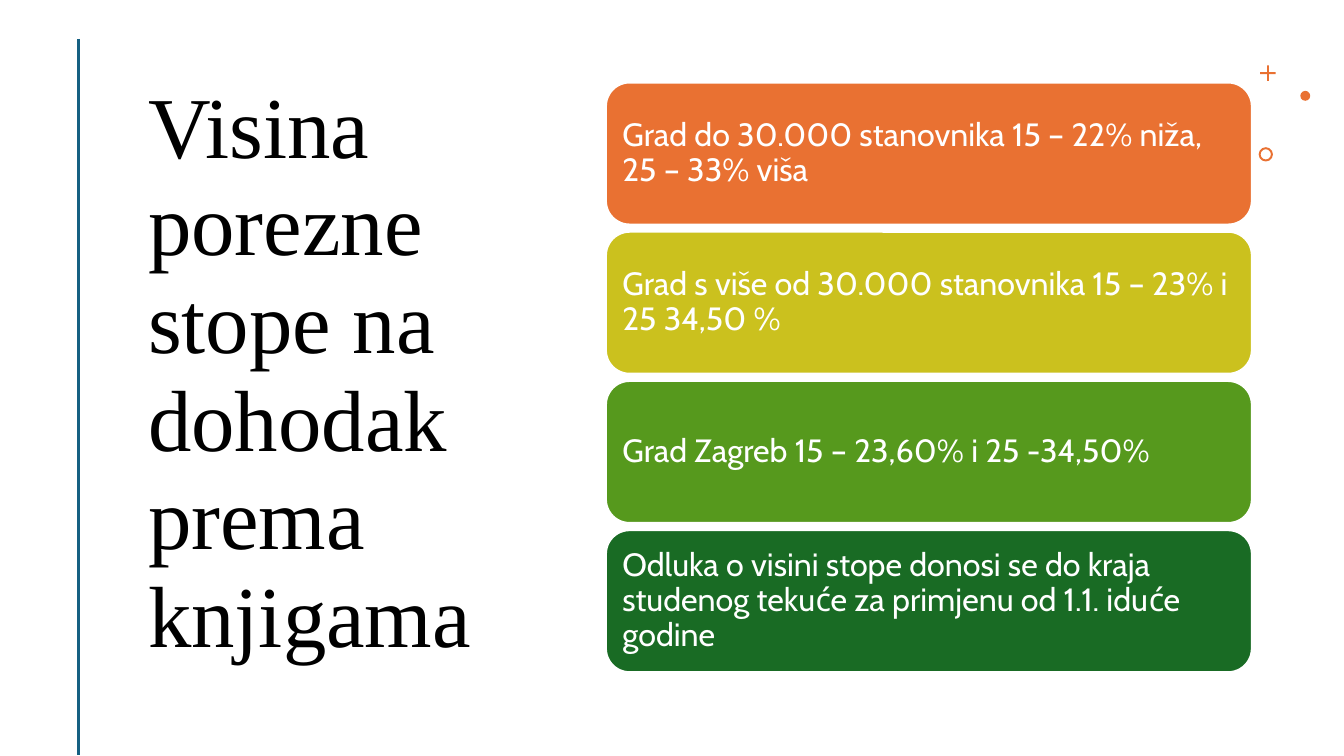
import pptx
import pptx.dml.color
import pptx.enum.shapes
import pptx.enum.text
import pptx.oxml
import pptx.util
from dataclasses import dataclass

Cm, Pt = pptx.util.Cm, pptx.util.Pt
RGB = pptx.dml.color.RGBColor.from_string
SHAPE = pptx.enum.shapes.MSO_SHAPE
TEXT = pptx.enum.text


@dataclass(frozen=True)
class Theme:
    title_font: str = "Times New Roman"
    card_font: str = "Cabin"
    title_size: int = 62
    card_size: int = 23
    ink: str = "000000"
    paper: str = "FFFFFF"
    rule: str = "156082"
    accent: str = "E97132"


theme = Theme()

# Content
TITLE = "Visina porezne stope na dohodak prema knjigama"
CARDS = [
    ("Grad do 30.000 stanovnika 15 – 22% niža, 25 – 33% viša", theme.accent),
    ("Grad s više od 30.000 stanovnika 15 – 23% i 25 34,50 %", "CBC11E"),
    ("Grad Zagreb 15 – 23,60% i 25 -34,50%", "56991D"),
    ("Odluka o visini stope donosi se do kraja studenog tekuće "
     "za primjenu od 1.1. iduće godine", "196B24"),
]
# Ornaments: shape, left, top, size in cm, adjustment
ORNAMENTS = [
    (SHAPE.CROSS, 31.76, 1.65, 0.39, 0.44),
    (SHAPE.OVAL, 32.77, 2.29, 0.25, None),
    (SHAPE.DONUT, 31.72, 3.71, 0.36, 0.14),
]

# Layout in cm
TITLE_BOX = (3.48, 1.65, 10.95, 15.52)
RULE_X, RULE_TOP, RULE_BOTTOM = 1.98, 0.98, 19.03
CARD_LEFT, CARD_TOP, CARD_W, CARD_H, CARD_GAP = 15.27, 2.08, 16.28, 3.58, 0.18


def add_filled(s, kind, left, top, width, height, color):
    sp = s.shapes.add_shape(kind, Cm(left), Cm(top), Cm(width), Cm(height))
    sp.shadow.inherit = False
    sp.fill.solid()
    sp.fill.fore_color.rgb = RGB(color)
    sp.line.fill.background()
    return sp


def write(tf, text, font, size, color, spacing):
    tf.word_wrap = True
    tf.auto_size = TEXT.MSO_AUTO_SIZE.NONE
    tf.vertical_anchor = TEXT.MSO_ANCHOR.MIDDLE
    p = tf.paragraphs[0]
    p.alignment = TEXT.PP_ALIGN.LEFT
    p.line_spacing = spacing
    r = p.add_run()
    r.text = text
    r.font.name = font
    r.font.size = Pt(size)
    r.font.color.rgb = RGB(color)


def main():
    prs = pptx.Presentation()
    prs.slide_width, prs.slide_height = Cm(33.87), Cm(19.05)
    s = prs.slides.add_slide(prs.slide_layouts[5])

    # Title
    title = s.shapes.title
    title.left, title.top, title.width, title.height = map(Cm, TITLE_BOX)
    write(title.text_frame, TITLE, theme.title_font, theme.title_size, theme.ink, 0.94)

    # Vertical rule
    rule = s.shapes.add_connector(
        pptx.enum.shapes.MSO_CONNECTOR.STRAIGHT,
        Cm(RULE_X), Cm(RULE_TOP), Cm(RULE_X), Cm(RULE_BOTTOM))
    rule.line.color.rgb = RGB(theme.rule)
    rule.line.width = Pt(2)
    sp_pr = rule._element.spPr
    sp_pr.append(pptx.oxml.parse_xml(
        '<a:effectLst xmlns:a="http://schemas.openxmlformats.org/drawingml/2006/main"/>'))

    # Corner ornaments
    for kind, left, top, size, adjustment in ORNAMENTS:
        sp = add_filled(s, kind, left, top, size, size, theme.accent)
        if adjustment is not None:
            sp.adjustments[0] = adjustment

    # Rate cards
    for i, (text, color) in enumerate(CARDS):
        top = CARD_TOP + i * (CARD_H + CARD_GAP)
        card = add_filled(s, SHAPE.ROUNDED_RECTANGLE, CARD_LEFT, top, CARD_W, CARD_H, color)
        card.line.color.rgb = RGB(theme.paper)
        card.line.width = Pt(1.5)
        tf = card.text_frame
        tf.margin_left = tf.margin_right = tf.margin_top = tf.margin_bottom = Cm(0.24)
        write(tf, text, theme.card_font, theme.card_size, theme.paper, 0.9)

    prs.save("out.pptx")


if __name__ == "__main__":
    main()
